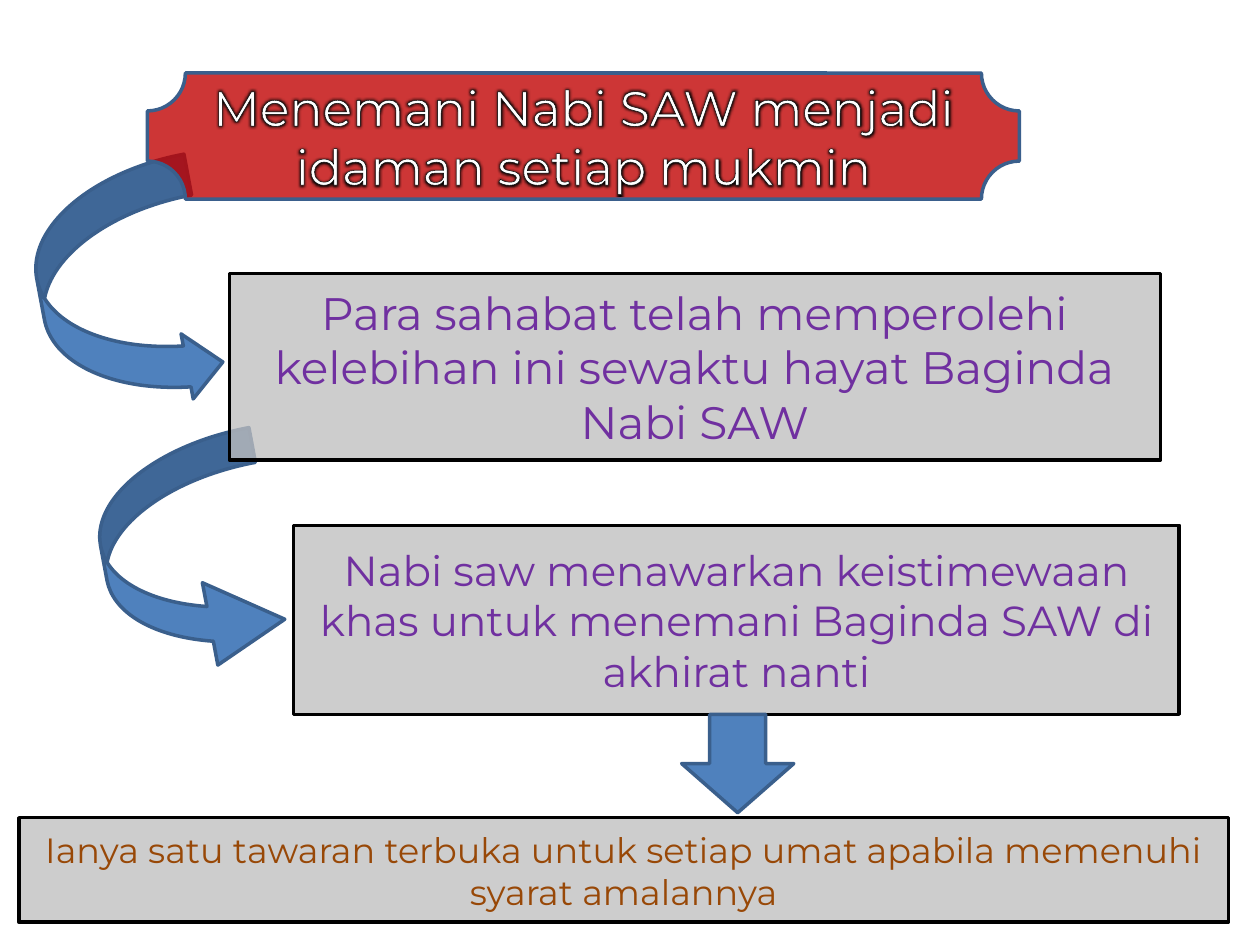
from lxml import etree
from pptx import Presentation
from pptx.dml.color import RGBColor
from pptx.enum.shapes import MSO_SHAPE as SHAPE
from pptx.enum.text import MSO_ANCHOR, PP_ALIGN
from pptx.oxml import parse_xml
from pptx.oxml.ns import nsdecls, qn
from pptx.util import Inches, Pt

BLUE = RGBColor(0x4F, 0x81, 0xBD)
DARK_BLUE = RGBColor(0x3A, 0x5F, 0x8C)
RED = RGBColor(0xC0, 0x00, 0x00)
GREY = RGBColor(0xBF, 0xBF, 0xBF)
BLACK = RGBColor(0x00, 0x00, 0x00)
WHITE = RGBColor(0xFF, 0xFF, 0xFF)
PURPLE = RGBColor(0x70, 0x30, 0xA0)
BROWN = RGBColor(0x98, 0x48, 0x07)
FONT = "Montserrat"


def add_shape(slide, kind, box, fill, line, adjustments=(), rotation=0, opacity=100):
    s = slide.shapes.add_shape(kind, *[Inches(v) for v in box])
    s.shadow.inherit = False
    s.rotation = rotation
    for i, value in enumerate(adjustments):
        s.adjustments[i] = value
    s.fill.solid()
    s.fill.fore_color.rgb = fill
    if opacity < 100:
        color = s.fill._xPr.find(f"{qn('a:solidFill')}/{qn('a:srgbClr')}")
        etree.SubElement(color, qn("a:alpha"), val=str(opacity * 1000))
    s.line.color.rgb = line
    s.line.width = Pt(2)
    return s


def add_arrow(slide, kind, box, **options):
    return add_shape(slide, kind, box, BLUE, DARK_BLUE, **options)


def add_text(s, text, size, color):
    tf = s.text_frame
    tf.word_wrap = True
    tf.vertical_anchor = MSO_ANCHOR.MIDDLE
    p = tf.paragraphs[0]
    p.alignment = PP_ALIGN.CENTER
    r = p.add_run()
    r.text = text
    for name, value in {"size": Pt(size), "name": FONT}.items():
        setattr(r.font, name, value)
    r.font.color.rgb = color
    return r


def add_box(slide, box, text, size, color):
    s = add_shape(slide, SHAPE.RECTANGLE, box, GREY, BLACK, opacity=77)
    add_text(s, text, size, color)


def outline_text(r):
    """Give the letters a thin black outline and a dark glow."""
    black = '<a:srgbClr val="000000"/>'
    ln = parse_xml(f'<a:ln {nsdecls("a")} w="9525"><a:solidFill>{black}</a:solidFill></a:ln>')
    glow = parse_xml(f'<a:effectLst {nsdecls("a")}><a:glow rad="38100">{black}</a:glow></a:effectLst>')
    rPr = r.font._element
    rPr.insert(0, ln)
    rPr.find(qn("a:solidFill")).addnext(glow)


def main():
    prs = Presentation()
    prs.slide_width, prs.slide_height = Inches(10), Inches(7.5)
    slide = prs.slides.add_slide(prs.slide_layouts[6])

    # Title plaque, over the tail of the first arrow
    add_arrow(slide, SHAPE.CURVED_RIGHT_ARROW, (0.32, 1.33, 1.33, 1.94),
              adjustments=(0.248, 0.395, 0.214), rotation=349.4)
    plaque = add_shape(slide, SHAPE.PLAQUE, (1.17, 0.58, 6.92, 1), RED, DARK_BLUE,
                       adjustments=(0.301,), opacity=79)
    outline_text(add_text(plaque, "Menemani Nabi SAW menjadi idaman setiap mukmin", 28, WHITE))

    # Companions, over the tail of the second arrow
    add_arrow(slide, SHAPE.CURVED_RIGHT_ARROW, (0.83, 3.5, 1.33, 1.88),
              adjustments=(0.211, 0.5, 0.443), rotation=349.4)
    add_box(slide, (1.82, 2.17, 7.39, 1.48),
            "Para sahabat telah memperolehi kelebihan ini sewaktu hayat Baginda Nabi SAW",
            26, PURPLE)

    # The offer, and who it is open to
    add_box(slide, (2.33, 4.17, 7.03, 1.5),
            "Nabi saw menawarkan keistimewaan khas untuk menemani Baginda SAW di akhirat nanti",
            24, PURPLE)
    add_arrow(slide, SHAPE.DOWN_ARROW, (5.41, 5.67, 0.89, 0.78))
    add_box(slide, (0.15, 6.49, 9.6, 0.83),
            "Ianya satu tawaran terbuka untuk setiap umat apabila memenuhi syarat amalannya",
            20, BROWN)

    prs.save("out.pptx")


if __name__ == "__main__":
    main()
